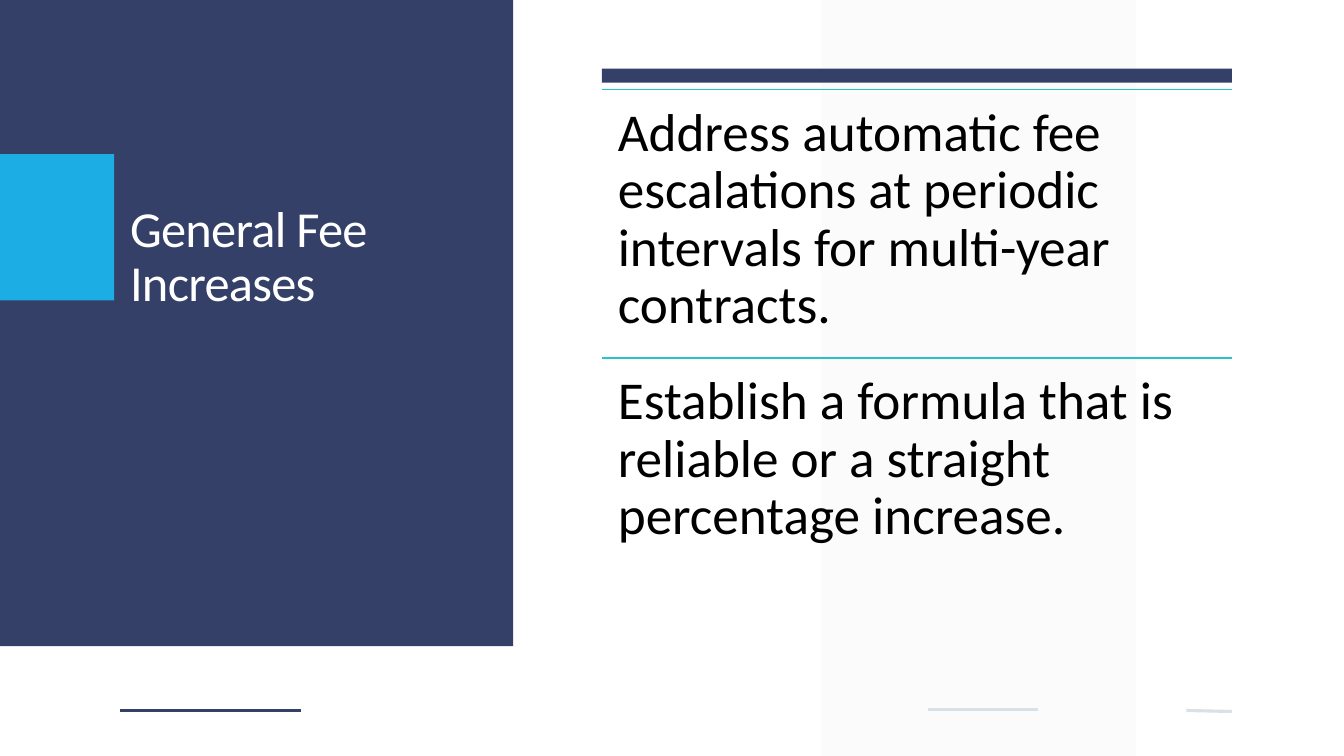
from pptx import Presentation
from pptx.dml.color import RGBColor
from pptx.enum import shapes, text
from pptx.oxml import ns, xmlchemy
from pptx.util import Pt

HUES = {
    "navy": "344068",
    "sky": "1CADE4",
    "teal": "28C4CC",
    "mist": "D9E0E6",
    "pale": "F2F2F2",
    "white": "FFFFFF",
    "black": "000000",
}
KIND = shapes.MSO_SHAPE
POINTS = [
    "Address automatic fee escalations at periodic intervals for multi-year contracts.",
    "Establish a formula that is reliable or a straight percentage increase.",
]


def hue(name):
    return RGBColor.from_string(HUES[name])


def block(slide, box, color, kind=KIND.RECTANGLE, alpha=None):
    shape = slide.shapes.add_shape(kind, *map(Pt, box))
    shape.shadow.inherit = False
    shape.fill.solid()
    shape.fill.fore_color.rgb = hue(color)
    shape.line.fill.background()
    if alpha is not None:
        fill = shape.element.spPr.find(ns.qn("a:solidFill"))
        tag = xmlchemy.OxmlElement("a:alpha")
        tag.set("val", str(alpha * 1000))
        fill[0].append(tag)
    return shape


def rule(slide, start, end, color, width):
    line = slide.shapes.add_connector(
        shapes.MSO_CONNECTOR.STRAIGHT, *map(Pt, start + end))
    line.line.color.rgb = hue(color)
    line.line.width = Pt(width)
    line.element.spPr.append(xmlchemy.OxmlElement("a:effectLst"))


def write(frame, words, size, color, anchor, inset=None, track=None):
    frame.word_wrap = True
    frame.auto_size = text.MSO_AUTO_SIZE.NONE
    frame.vertical_anchor = anchor
    if inset is not None:
        frame.margin_left = frame.margin_right = Pt(inset)
        frame.margin_top = frame.margin_bottom = Pt(inset)
    para = frame.paragraphs[0]
    para.alignment = text.PP_ALIGN.LEFT
    para.line_spacing = 0.9
    run = para.add_run()
    run.text = words
    run.font.size = Pt(size)
    run.font.name = "Calibri"
    run.font.color.rgb = hue(color)
    if track is not None:
        run.font.element.set("spc", str(track)) if hasattr(run.font, "element") \
            else para.runs[0]._r.get_or_add_rPr().set("spc", str(track))


def panel(slide, box):
    left, top, width, height = box
    block(slide, box, "navy")
    block(slide, (left, top + 110, 81.5, 104.5), "sky")
    title = slide.shapes.title
    title.left, title.top = Pt(left + 85.7), Pt(top + 62)
    title.width, title.height = Pt(242), Pt(165)
    write(title.text_frame, "General Fee Increases", 36, "white",
          text.MSO_ANCHOR.BOTTOM, track=-50)
    slide.shapes.element.append(title.element) if hasattr(slide.shapes, "element") \
        else title.element.getparent().append(title.element)


def points(slide, box):
    left, top, width, height = box
    block(slide, (left, top - 15, width, 10), "navy")
    step = height / len(POINTS)
    for i, words in enumerate(POINTS):
        y = top + i * step
        rule(slide, (left, y), (left + width, y), "teal", 1.25)
        note = slide.shapes.add_textbox(*map(Pt, (left, y, width, step)))
        write(note.text_frame, words, 38, "black",
              text.MSO_ANCHOR.TOP, inset=11.4)


def footer(slide, box):
    left, top, width, height = box
    right = left + width
    rule(slide, (left + 129.6, top + 1), (left, top + 1), "navy", 2.25)
    rule(slide, (right - 138.2, top), (right - 216.7, top), "mist", 2.25)
    rule(slide, (right, top + 1.7), (right - 32.4, top + 1), "mist", 2.25)


def main():
    deck = Presentation()
    deck.slide_width, deck.slide_height = Pt(960), Pt(540)
    slide = deck.slides.add_slide(deck.slide_layouts[5])
    footer(slide, (85.7, 506.5, 794.2, 2))
    band = block(slide, (586.8, 0, 224.6, 540), "pale", KIND.PARALLELOGRAM, 30)
    band.adjustments[0] = 0
    slide.shapes[0].element.addprevious(band.element)
    panel(slide, (0, 0, 366.5, 461.5))
    points(slide, (429.9, 64, 450, 383))
    deck.save("out.pptx")


if __name__ == "__main__":
    main()
